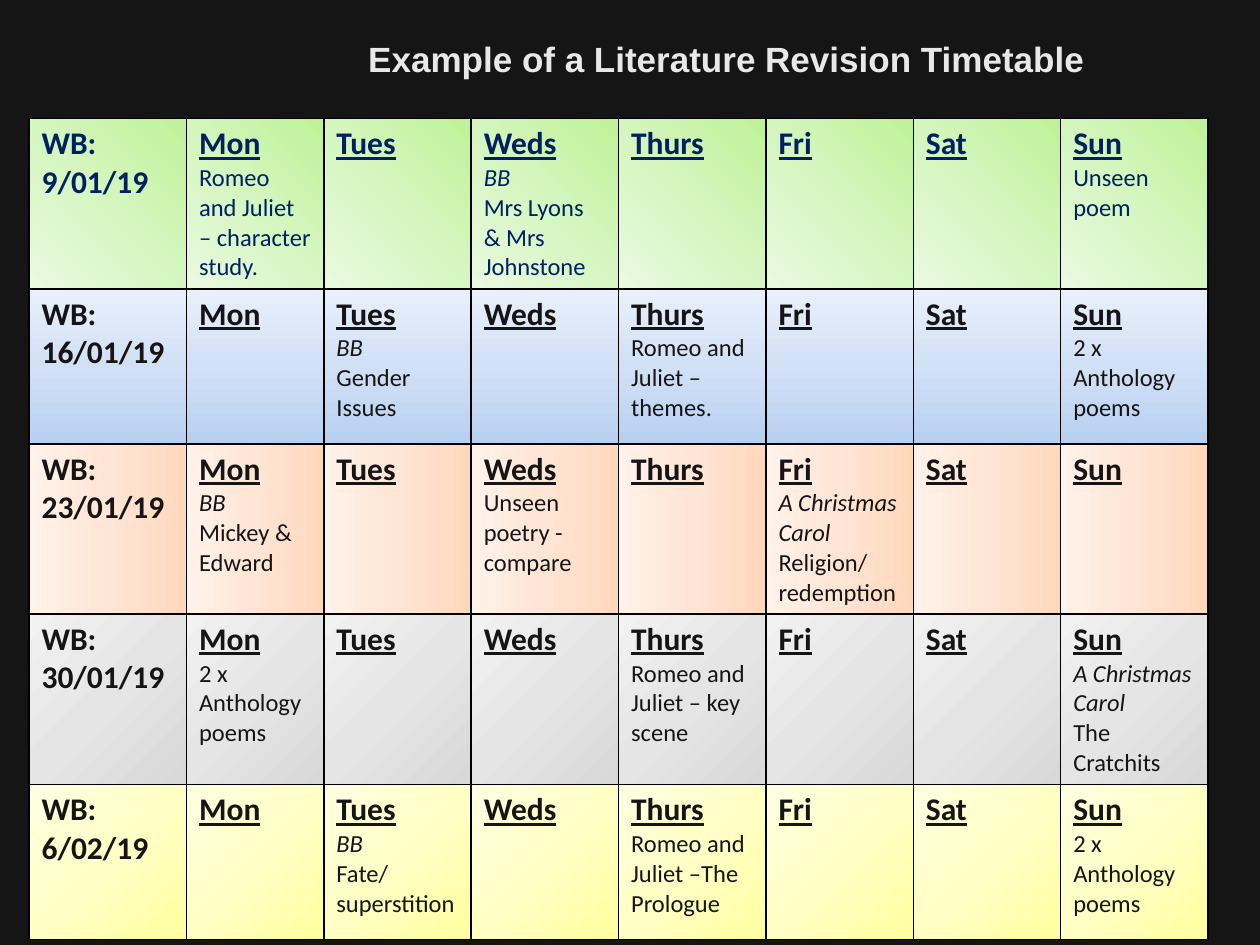
"""Build a one-slide literature revision timetable."""
import pptx
import pptx.dml.color
import pptx.enum.shapes
import pptx.enum.text
import pptx.oxml.ns
import pptx.util
from lxml import etree
from pptx.util import Inches

TITLE = "Example of a Literature Revision Timetable"
DAYS = ["Mon", "Tues", "Weds", "Thurs", "Fri", "Sat", "Sun"]
ITALIC_LINES = {"BB", "A Christmas", "Carol", "A Christmas Carol"}
DARK, NAVY, PALE, BLACK = "151515", "002060", "E8E8E8", "000000"
COLUMN_WIDTHS = [1.25, 1.09] + [1.17] * 6
BORDER_SIDES = ["L", "R", "T", "B"]

WEEKS = [
    {"date": "9/01/19", "height": 1.32, "ink": NAVY, "angle": None,
     "colours": ["BEF297", "D5F6C0", "EAFAE0"],
     "tasks": {"Mon": ["Romeo and Juliet – character study."],
               "Weds": ["BB", "Mrs Lyons & Mrs Johnstone"],
               "Sun": ["Unseen poem"]}},
    {"date": "16/01/19", "height": 1.23, "ink": DARK, "angle": 270,
     "colours": ["B7D0F1", "D2E0F5", "E8EFFA"],
     "tasks": {"Tues": ["BB", "Gender", "Issues"],
               "Thurs": ["Romeo and Juliet – themes."],
               "Sun": ["2 x Anthology poems"]}},
    {"date": "23/01/19", "height": 1.32, "ink": DARK, "angle": 180,
     "colours": ["FFD8BC", "FFE5D5", "FFF2EA"],
     "tasks": {"Mon": ["BB", "Mickey & Edward"],
               "Weds": ["Unseen poetry - compare"],
               "Fri": ["A Christmas", "Carol", "Religion/", "redemption"]}},
    {"date": "30/01/19", "height": 1.32, "ink": DARK, "angle": 225,
     "colours": ["D8D8D8", "E5E5E5", "F2F2F2"],
     "tasks": {"Mon": ["2 x Anthology poems"],
               "Thurs": ["Romeo and Juliet – key scene"],
               "Sun": ["A Christmas Carol", "The Cratchits"]}},
    {"date": "6/02/19", "height": 1.23, "ink": DARK, "angle": 225,
     "colours": ["FFFFA0", "FFFFC5", "FFFFE3"],
     "tasks": {"Tues": ["BB", "Fate/", "superstition"],
               "Thurs": ["Romeo and Juliet –The Prologue"],
               "Sun": ["2 x Anthology poems"]}},
]


def rgb(colour):
    return pptx.dml.color.RGBColor.from_string(colour)


def add_element(parent, tag, **attributes):
    element = etree.SubElement(parent, pptx.oxml.ns.qn(f"a:{tag}"))
    for name, value in attributes.items():
        element.set(name, str(value))
    return element


def format_font(font, name, size, colour, bold=False, italic=False, underline=False):
    font.name, font.size = name, pptx.util.Pt(size)
    font.bold, font.italic, font.underline = bold, italic, underline
    font.color.rgb = rgb(colour)


def style_cell(cell, colours, angle):
    properties = cell._tc.get_or_add_tcPr()
    for side in BORDER_SIDES:
        border = add_element(properties, f"ln{side}", w=pptx.util.Pt(1))
        add_element(add_element(border, "solidFill"), "srgbClr", val=BLACK)
    gradient = add_element(properties, "gradFill", rotWithShape=1)
    stops = add_element(gradient, "gsLst")
    for index, colour in enumerate(colours):
        stop = add_element(stops, "gs", pos=index * 50000)
        add_element(stop, "srgbClr", val=colour)
    if angle is None:
        circle = add_element(gradient, "path", path="circle")
        add_element(circle, "fillToRect", l=100000, b=100000)
    else:
        add_element(gradient, "lin", ang=angle * 60000, scaled=0)


def write_cell(cell, headings, tasks, ink, underline):
    cell.text_frame.text = "\n".join(headings + tasks)
    for index, paragraph in enumerate(cell.text_frame.paragraphs):
        font = paragraph.runs[0].font
        if index < len(headings):
            format_font(font, "Calibri", 18, ink, bold=True, underline=underline)
        else:
            format_font(font, "Calibri", 14, ink, italic=paragraph.text in ITALIC_LINES)


def add_timetable(slide):
    height = sum(week["height"] for week in WEEKS)
    table = slide.shapes.add_table(
        len(WEEKS), len(COLUMN_WIDTHS), Inches(0.23), Inches(0.94),
        Inches(sum(COLUMN_WIDTHS)), Inches(height)).table
    table.first_row = table.horz_banding = False
    for column, width in zip(table.columns, COLUMN_WIDTHS):
        column.width = Inches(width)
    for row, week in zip(table.rows, WEEKS):
        row.height = Inches(week["height"])
        week_cell, *day_cells = row.cells
        write_cell(week_cell, ["WB:", week["date"]], [], week["ink"], False)
        for cell, day in zip(day_cells, DAYS):
            write_cell(cell, [day], week["tasks"].get(day, []), week["ink"], True)
        for cell in row.cells:
            style_cell(cell, week["colours"], week["angle"])


def add_title(slide):
    shape = slide.shapes.add_shape(
        pptx.enum.shapes.MSO_SHAPE.RECTANGLE,
        Inches(1.72), Inches(0.25), Inches(7.89), Inches(0.44))
    shape.shadow.inherit = False
    shape.fill.solid()
    shape.fill.fore_color.rgb = rgb(DARK)
    shape.line.fill.background()
    frame = shape.text_frame
    frame.word_wrap = True
    frame.margin_left = Inches(0.3)
    frame.vertical_anchor = pptx.enum.text.MSO_ANCHOR.TOP
    frame.text = TITLE
    paragraph = frame.paragraphs[0]
    paragraph.alignment = pptx.enum.text.PP_ALIGN.CENTER
    format_font(paragraph.runs[0].font, "Arial", 20, PALE, bold=True)


def main():
    presentation = pptx.Presentation()
    presentation.slide_width, presentation.slide_height = Inches(10), Inches(7.5)
    slide = presentation.slides.add_slide(presentation.slide_layouts[6])
    slide.background.fill.solid()
    slide.background.fill.fore_color.rgb = rgb(DARK)
    add_timetable(slide)
    add_title(slide)
    presentation.save("out.pptx")


if __name__ == "__main__":
    main()
